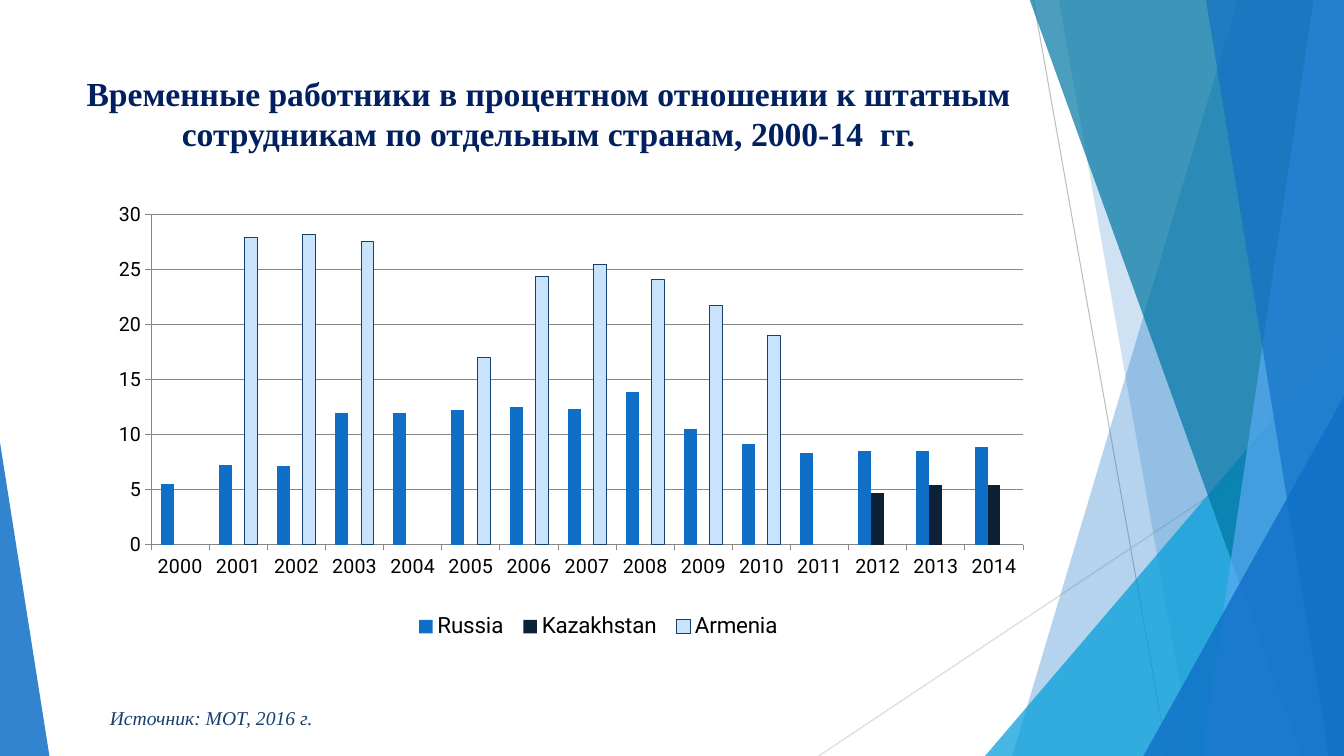
from pptx import Presentation
from pptx.chart.data import CategoryChartData
from pptx.dml.color import RGBColor
from pptx.enum.chart import XL_CHART_TYPE, XL_LEGEND_POSITION, XL_TICK_MARK
from pptx.enum.shapes import MSO_CONNECTOR, MSO_SHAPE
from pptx.enum.text import MSO_ANCHOR, PP_ALIGN
from pptx.oxml import parse_xml
from pptx.oxml.ns import nsdecls, qn
from pptx.util import Inches, Pt
from lxml.etree import SubElement

BLUE = RGBColor(0x0F, 0x6F, 0xC6)
CYAN = RGBColor(0x00, 0x9D, 0xD9)
TEAL = RGBColor(0x00, 0x76, 0xA3)
SKY = RGBColor(0x59, 0xAA, 0xF2)
PALE = RGBColor(0xC8, 0xE3, 0xFB)
INK = RGBColor(0x0C, 0x20, 0x36)
NAVY = RGBColor(0x00, 0x20, 0x60)
STEEL = RGBColor(0x17, 0x40, 0x6D)
GRID = RGBColor(0x86, 0x86, 0x86)
GREY = RGBColor(0xBF, 0xBF, 0xBF)
LIGHT_GREY = RGBColor(0xD9, 0xD9, 0xD9)
BLACK = RGBColor(0x00, 0x00, 0x00)

WIDTH, HEIGHT = 13.33, 7.5
TOP = -0.01

YEARS = [str(year) for year in range(2000, 2015)]
RUSSIA = [5.5, 7.2, 7.1, 12, 12, 12.2, 12.5, 12.3, 13.9, 10.5, 9.1, 8.3, 8.5, 8.5, 8.9]
KAZAKHSTAN = [None] * 12 + [4.7, 5.4, 5.4]
ARMENIA = [None, 27.9, 28.2, 27.6, None, 17, 24.4, 25.5, 24.1, 21.7, 19] + [None] * 4
# name, values, fill, outline
SERIES = [
    ("Russia", RUSSIA, BLUE, None),
    ("Kazakhstan", KAZAKHSTAN, INK, None),
    ("Armenia", ARMENIA, PALE, STEEL),
]


def set_layout(element, x, y, width, height, inner=False):
    """Place a plot area or legend by fractions of the chart."""
    for old in element.findall(qn("c:layout")):
        element.remove(old)
    target = '<c:layoutTarget val="inner"/>' if inner else ""
    layout = parse_xml(
        f'<c:layout {nsdecls("c")}><c:manualLayout>{target}'
        '<c:xMode val="edge"/><c:yMode val="edge"/>'
        f'<c:x val="{x}"/><c:y val="{y}"/><c:w val="{width}"/><c:h val="{height}"/>'
        "</c:manualLayout></c:layout>"
    )
    position = element.find(qn("c:legendPos"))
    if position is None:
        element.insert(0, layout)
    else:
        position.addnext(layout)


class SlideBuilder:
    text_font = "Times New Roman"
    chart_font = "Roboto"

    def __init__(self, page):
        self.page = page

    def line(self, start, end, color):
        connector = self.page.shapes.add_connector(
            MSO_CONNECTOR.STRAIGHT, *[Inches(value) for value in start + end])
        connector.line.color.rgb = color
        connector.line.width = Pt(0.75)
        SubElement(connector._element.spPr, qn("a:effectLst"))

    def paint(self, shape, color, opacity):
        shape.shadow.inherit = False
        shape.fill.solid()
        shape.fill.fore_color.rgb = color
        shape.line.fill.background()
        tint = shape._element.spPr.find(qn("a:solidFill"))[0]
        SubElement(tint, qn("a:alpha"), val=str(opacity * 1000))

    def band(self, top_left, bottom_left, color, opacity):
        """Fill from a slanted left edge to the right side of the slide."""
        outline = self.page.shapes.build_freeform(Inches(top_left), Inches(TOP))
        corners = [(WIDTH, TOP), (WIDTH, HEIGHT), (bottom_left, HEIGHT)]
        outline.add_line_segments([(Inches(x), Inches(y)) for x, y in corners])
        self.paint(outline.convert_to_shape(), color, opacity)

    def triangle(self, left, top, width, apex, color, opacity):
        """Stand a triangle on the bottom edge of the slide."""
        shape = self.page.shapes.add_shape(
            MSO_SHAPE.ISOSCELES_TRIANGLE, Inches(left), Inches(top),
            Inches(width), Inches(HEIGHT - top))
        shape.adjustments[0] = apex
        self.paint(shape, color, opacity)

    def text(self, place, words, size, color, align=PP_ALIGN.LEFT, bold=False, italic=False):
        box = self.page.shapes.add_textbox(*[Inches(value) for value in place])
        box.text_frame.word_wrap = True
        box.text_frame.vertical_anchor = MSO_ANCHOR.TOP
        para = box.text_frame.paragraphs[0]
        para.alignment = align
        span = para.add_run()
        span.text = words
        span.font.name = self.text_font
        span.font.size = Pt(size)
        span.font.bold = bold
        span.font.italic = italic
        span.font.color.rgb = color

    def column_chart(self, place):
        data = CategoryChartData()
        data.categories = YEARS
        for name, values, _, _ in SERIES:
            data.add_series(name, values)
        chart = self.page.shapes.add_chart(
            XL_CHART_TYPE.COLUMN_CLUSTERED, *[Inches(value) for value in place], data).chart
        chart.has_title = False
        chart.font.name = self.chart_font
        chart.font.size = Pt(10)
        chart.font.color.rgb = BLACK
        plot = chart.plots[0]
        plot.gap_width = 150
        plot.overlap = 0
        plot.vary_by_categories = False
        for series, (_, _, color, outline) in zip(plot.series, SERIES):
            series.invert_if_negative = False
            series.format.fill.solid()
            series.format.fill.fore_color.rgb = color
            if outline is None:
                series.format.line.fill.background()
            else:
                series.format.line.color.rgb = outline
                series.format.line.width = Pt(0.75)
        for axis in (chart.category_axis, chart.value_axis):
            axis.major_tick_mark = XL_TICK_MARK.OUTSIDE
            axis.minor_tick_mark = XL_TICK_MARK.NONE
            axis.tick_labels.font.size = Pt(14)
            axis.format.line.color.rgb = GRID
            axis.format.line.width = Pt(0.75)
        scale = chart.value_axis
        scale.minimum_scale, scale.maximum_scale, scale.major_unit = 0, 30, 5
        scale.has_major_gridlines = True
        scale.major_gridlines.format.line.color.rgb = GRID
        scale.major_gridlines.format.line.width = Pt(0.75)
        chart.has_legend = True
        legend = chart.legend
        legend.position = XL_LEGEND_POSITION.RIGHT
        legend.include_in_layout = False
        legend.font.size = Pt(16)
        set_layout(plot._element.getparent(), 0.057, 0.051, 0.932, 0.668, inner=True)
        set_layout(legend._element, 0.33, 0.85, 0.41, 0.07)


def main():
    deck = Presentation()
    deck.slide_width, deck.slide_height = Inches(WIDTH), Inches(HEIGHT)
    slide = SlideBuilder(deck.slides.add_slide(deck.slide_layouts[6]))

    slide.line((10.25, 0), (11.58, HEIGHT), GREY)
    slide.line((WIDTH, 4.03), (8.12, HEIGHT), LIGHT_GREY)
    slide.band(12.28, 10.04, BLUE, 30)
    slide.band(10.5, 11.83, BLUE, 20)
    slide.triangle(9.77, 3.33, 3.56, 1, CYAN, 72)
    slide.band(10.21, 12.91, TEAL, 70)
    slide.band(13.03, 11.92, SKY, 70)
    slide.band(11.96, 13.18, BLUE, 65)
    slide.triangle(11.34, 3.93, 1.99, 1, BLUE, 80)
    slide.triangle(0, 4.39, 0.49, 0, BLUE, 85)

    slide.text(
        (0.74, 0.67, 9.4, 1.44),
        "Временные работники в процентном отношении к штатным "
        "сотрудникам по отдельным странам, 2000-14  гг.",
        24, NAVY, align=PP_ALIGN.CENTER, bold=True)
    slide.column_chart((0.97, 1.88, 9.28, 4.9))
    slide.text((0.99, 6.95, 3.59, 0.34), "Источник: МОТ, 2016 г.", 14, STEEL, italic=True)
    deck.save("out.pptx")


if __name__ == "__main__":
    main()
